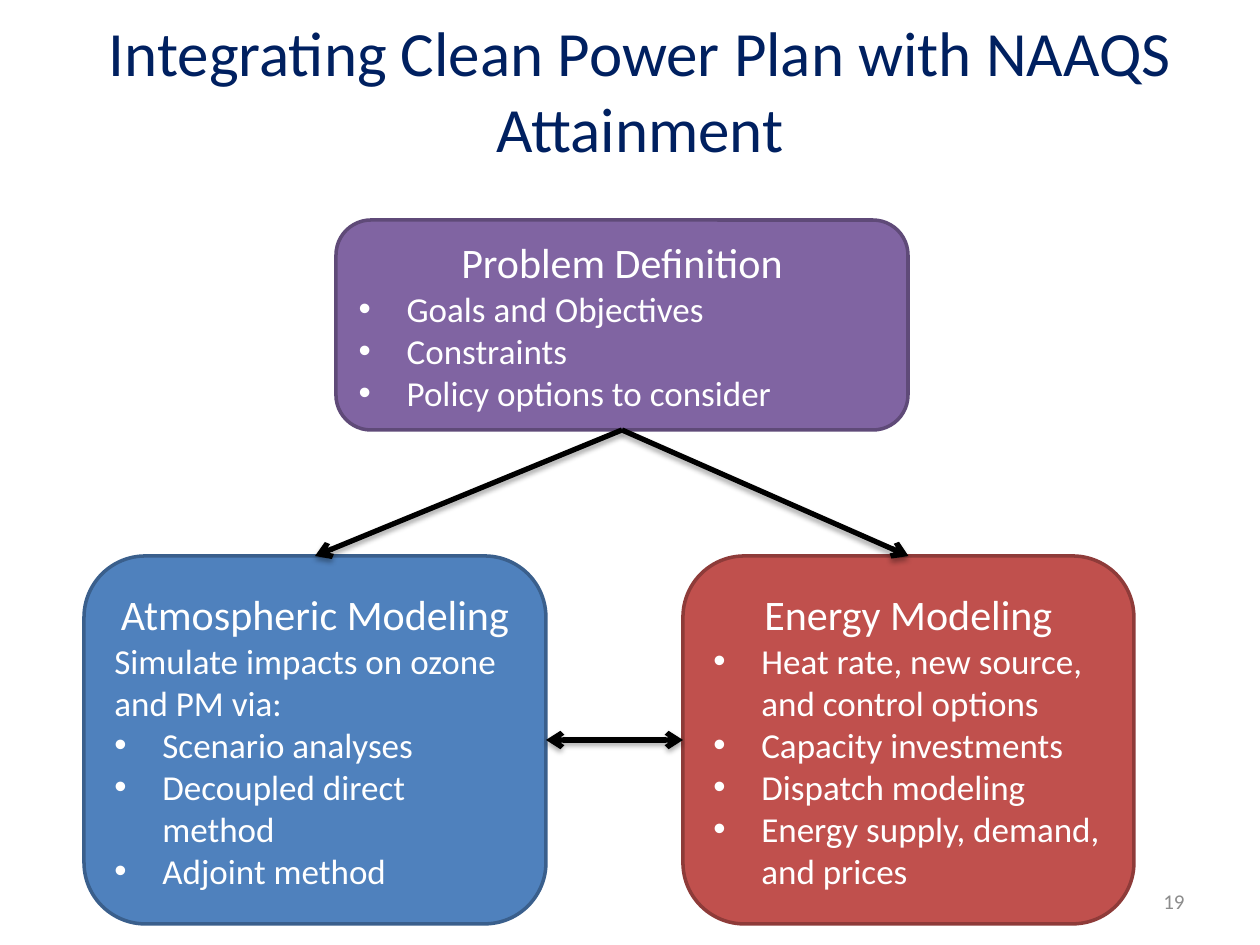
from lxml import etree
from pptx import Presentation
from pptx.dml.color import RGBColor
from pptx.enum.shapes import MSO_CONNECTOR, MSO_SHAPE
from pptx.enum.text import MSO_ANCHOR, PP_ALIGN
from pptx.oxml.ns import qn
from pptx.util import Emu, Pt

ROUNDED, STRAIGHT = MSO_SHAPE.ROUNDED_RECTANGLE, MSO_CONNECTOR.STRAIGHT
MIDDLE = MSO_ANCHOR.MIDDLE
LEFT, CENTER, RIGHT = PP_ALIGN.LEFT, PP_ALIGN.CENTER, PP_ALIGN.RIGHT
TOP_SIDE, LEFT_SIDE, BOTTOM_SIDE, RIGHT_SIDE = range(4)

NAVY = RGBColor(0x00, 0x20, 0x60)
GRAY = RGBColor(0x8C, 0x8C, 0x8C)
WHITE = RGBColor(0xFF, 0xFF, 0xFF)
BLACK = RGBColor(0x00, 0x00, 0x00)
BLUE, DARK_BLUE = RGBColor(0x4F, 0x81, 0xBD), RGBColor(0x3A, 0x5F, 0x8C)
RED, DARK_RED = RGBColor(0xC0, 0x50, 0x4D), RGBColor(0x8E, 0x3B, 0x39)
PURPLE, DARK_PURPLE = RGBColor(0x80, 0x64, 0xA2), RGBColor(0x5F, 0x4A, 0x78)

PX_PER_INCH = 126
BULLET_INDENT = 48
TITLE_FORMAT = {"size": Pt(36), "name": "Calibri"}
NUMBER_FORMAT = {"size": Pt(12), "name": "Calibri"}
HEADING_FORMAT = {"size": Pt(24), "name": "Calibri"}
BODY_FORMAT = {"size": Pt(20), "name": "Calibri"}


def px(length):
    """Turn whole pixels into EMU."""
    return Emu(round(length * 914400 / PX_PER_INCH))


def write_para(para, text, values, color, align):
    """Write one formatted span into a paragraph."""
    para.alignment = align
    span = para.add_run()
    span.text = text
    for name, value in values.items():
        setattr(span.font, name, value)
    span.font.color.rgb = color


def add_bullet(para):
    """Give a paragraph a hanging round bullet."""
    props = para._p.get_or_add_pPr()
    props.set("marL", str(px(BULLET_INDENT)))
    props.set("indent", str(-px(BULLET_INDENT)))
    etree.SubElement(props, qn("a:buFont"), typeface="Arial")
    etree.SubElement(props, qn("a:buChar"), char="•")


def add_label(page, box, text, values, color, align):
    """Place a vertically centred line of plain text in a box."""
    frame = page.shapes.add_textbox(*map(px, box)).text_frame
    frame.word_wrap = True
    frame.vertical_anchor = MIDDLE
    write_para(frame.paragraphs[0], text, values, color, align)


def add_card(page, box, fill, border, heading, bullets, intro=None):
    """Place a rounded card with a heading, optional intro and bullets."""
    card = page.shapes.add_shape(ROUNDED, *map(px, box))
    card.shadow.inherit = False
    card.fill.solid()
    card.fill.fore_color.rgb = fill
    card.line.color.rgb = border
    card.line.width = Pt(2)
    frame = card.text_frame
    frame.word_wrap = True
    frame.vertical_anchor = MIDDLE
    write_para(frame.paragraphs[0], heading, HEADING_FORMAT, WHITE, CENTER)
    if intro:
        write_para(frame.add_paragraph(), intro, BODY_FORMAT, WHITE, LEFT)
    for bullet in bullets:
        para = frame.add_paragraph()
        write_para(para, bullet, BODY_FORMAT, WHITE, LEFT)
        add_bullet(para)
    return card


def add_arrow(page, start, start_side, end, end_side, ends=("tailEnd",)):
    """Join two cards with a softly shadowed arrow."""
    arrow = page.shapes.add_connector(STRAIGHT, 0, 0, 0, 0)
    arrow.begin_connect(start, start_side)
    arrow.end_connect(end, end_side)
    arrow.line.color.rgb = BLACK
    arrow.line.width = Pt(3)
    line = arrow.line._get_or_add_ln()
    for name in ends:
        etree.SubElement(line, qn(f"a:{name}"), type="arrow")
    effects = etree.SubElement(arrow._element.spPr, qn("a:effectLst"))
    shadow = etree.SubElement(effects, qn("a:outerShdw"), blurRad=str(Pt(3.1)),
                              dist=str(Pt(1.8)), dir="5400000", rotWithShape="0")
    color = etree.SubElement(shadow, qn("a:srgbClr"), val=str(BLACK))
    etree.SubElement(color, qn("a:alpha"), val="35000")


def add_diagram(page, box):
    """Place three linked cards: one above, two below."""
    left, top, width, height = box
    lower_top, lower_height = top + 336, height - 336
    energy_width = 451
    atmosphere = add_card(
        page, (left, lower_top, 462, lower_height), BLUE, DARK_BLUE,
        "Atmospheric Modeling",
        ["Scenario analyses", "Decoupled direct method", "Adjoint method"],
        "Simulate impacts on ozone and PM via:")
    energy = add_card(
        page, (left + width - energy_width, lower_top, energy_width, lower_height),
        RED, DARK_RED, "Energy Modeling",
        ["Heat rate, new source, and control options", "Capacity investments",
         "Dispatch modeling", "Energy supply, demand, and prices"])
    problem = add_card(
        page, (left + 252, top, 572, 210), PURPLE, DARK_PURPLE,
        "Problem Definition",
        ["Goals and Objectives", "Constraints", "Policy options to consider"])
    for target in (energy, atmosphere):
        add_arrow(page, problem, BOTTOM_SIDE, target, TOP_SIDE)
    add_arrow(page, atmosphere, RIGHT_SIDE, energy, LEFT_SIDE, ("headEnd", "tailEnd"))


def main():
    """Build the slide and save the deck."""
    deck = Presentation()
    deck.slide_width, deck.slide_height = px(1260), px(945)
    page = deck.slides.add_slide(deck.slide_layouts[6])
    add_label(page, (73, 10, 1134, 158),
              "Integrating Clean Power Plan with NAAQS Attainment",
              TITLE_FORMAT, NAVY, CENTER)
    add_label(page, (903, 876, 294, 50), "19", NUMBER_FORMAT, GRAY, RIGHT)
    add_diagram(page, (84, 220, 1050, 704))
    deck.save("out.pptx")


if __name__ == "__main__":
    main()
